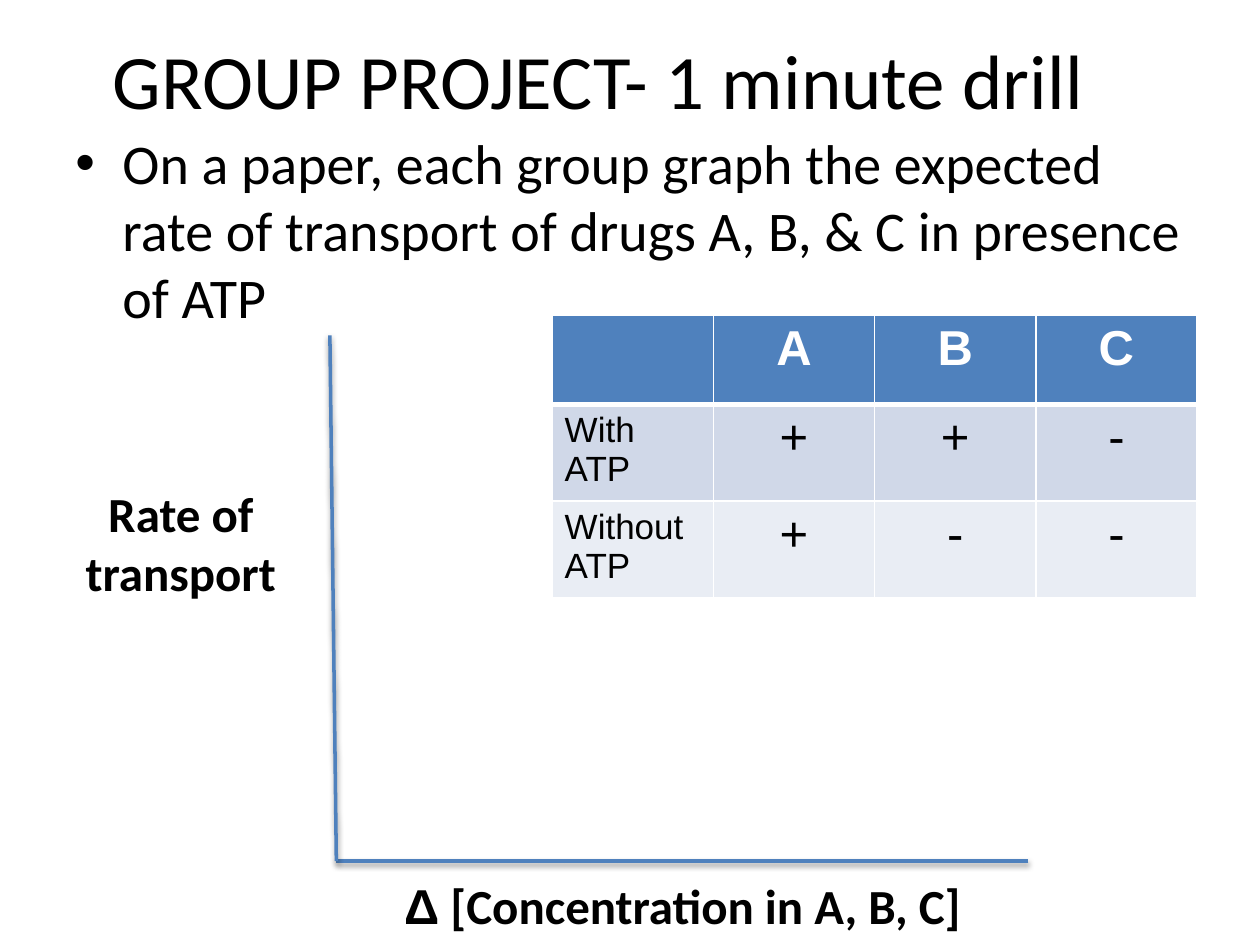
from dataclasses import dataclass

from lxml.etree import SubElement
from pptx import Presentation
from pptx.dml.color import RGBColor
from pptx.enum.shapes import MSO_CONNECTOR
from pptx.enum.text import MSO_ANCHOR, PP_ALIGN
from pptx.oxml.ns import qn
from pptx.util import Cm, Pt


@dataclass(frozen=True)
class Theme:
    ink: str = "000000"
    white: str = "FFFFFF"
    accent: str = "4F81BD"
    bands: tuple = ("D0D8E8", "E9EDF4")
    body_font: str = "Calibri"
    table_font: str = "Arial"
    title: int = 44
    body: int = 32
    label: int = 28
    row_head: int = 20


def rgb(value):
    return RGBColor.from_string(value)


class Deck:
    def __init__(self, theme, width, height):
        self.theme = theme
        self.prs = Presentation()
        self.prs.slide_width, self.prs.slide_height = Cm(width), Cm(height)
        self.s = self.prs.slides.add_slide(self.prs.slide_layouts[6])

    def run(self, p, text, size, font=None, color=None, bold=False):
        r = p.add_run()
        r.text = text
        r.font.size, r.font.bold = Pt(size), bold
        r.font.name = font or self.theme.body_font
        r.font.color.rgb = rgb(color or self.theme.ink)

    def text(self, box, runs, size, bold=False, align=PP_ALIGN.LEFT,
             anchor=MSO_ANCHOR.TOP, wrap=True):
        """Place one paragraph made of (text, font) runs."""
        tf = self.s.shapes.add_textbox(*map(Cm, box)).text_frame
        tf.word_wrap, tf.vertical_anchor = wrap, anchor
        p = tf.paragraphs[0]
        p.alignment = align
        for text, font in runs:
            self.run(p, text, size, font, bold=bold)
        return p

    def bullet(self, box, text, indent=0.95):
        p = self.text(box, [(text, None)], self.theme.body)
        p.space_before = Pt(0.2 * self.theme.body)
        pPr = p._p.get_or_add_pPr()
        pPr.set("marL", str(Cm(indent)))
        pPr.set("indent", str(-Cm(indent)))
        SubElement(pPr, qn("a:buFont"), typeface="Arial")
        SubElement(pPr, qn("a:buChar"), char="•")

    def axis(self, start, end):
        sp = self.s.shapes.add_connector(
            MSO_CONNECTOR.STRAIGHT, *map(Cm, start + end))
        sp.line.color.rgb = rgb(self.theme.accent)
        sp.line.width = Pt(2)
        # Soft shadow straight below the line
        effects = SubElement(sp._element.spPr, qn("a:effectLst"))
        shadow = SubElement(effects, qn("a:outerShdw"), blurRad=str(Pt(3.1)),
                            dist=str(Pt(1.6)), dir="5400000", rotWithShape="0")
        color = SubElement(shadow, qn("a:srgbClr"), val=self.theme.ink)
        SubElement(color, qn("a:alpha"), val="38000")

    def cell(self, cell, fill, top, bottom):
        tcPr = cell._tc.get_or_add_tcPr()
        for side, width in zip("LRTB", (1, 1, top, bottom)):
            ln = SubElement(tcPr, qn(f"a:ln{side}"), w=str(Pt(width)))
            solid = SubElement(ln, qn("a:solidFill"))
            SubElement(solid, qn("a:srgbClr"), val=self.theme.white)
        cell.fill.solid()
        cell.fill.fore_color.rgb = rgb(fill)

    def table(self, left, top, col_width, row_heights, rows):
        t = self.theme
        n_cols = len(rows[0])
        table = self.s.shapes.add_table(
            len(rows), n_cols, Cm(left), Cm(top),
            Cm(col_width * n_cols), Cm(sum(row_heights))).table
        for col in table.columns:
            col.width = Cm(col_width)
        for i, values in enumerate(rows):
            table.rows[i].height = Cm(row_heights[i])
            header = i == 0
            fill = t.accent if header else t.bands[(i - 1) % 2]
            for j, value in enumerate(values):
                cell = table.cell(i, j)
                self.cell(cell, fill, 3 if i == 1 else 1, 3 if header else 1)
                if not value:
                    continue
                p = cell.text_frame.paragraphs[0]
                p.alignment = PP_ALIGN.CENTER if j else PP_ALIGN.LEFT
                self.run(p, value, t.label if j else t.row_head, t.table_font,
                         t.white if header else t.ink, header)


def main():
    theme = Theme()
    deck = Deck(theme, 25.4, 19.05)

    # Title and task
    deck.text((0, 0, 24.13, 3.18), [("GROUP PROJECT- 1 minute drill", None)],
              theme.title, align=PP_ALIGN.CENTER, anchor=MSO_ANCHOR.MIDDLE)
    deck.bullet((1.27, 2.46, 22.86, 12.29),
                "On a paper, each group graph the expected rate of transport "
                "of drugs A, B, & C in presence of ATP")

    # Empty graph: axes and their labels
    origin = (6.78, 17.36)
    deck.axis((20.73, 17.36), origin)
    deck.axis((6.65, 6.76), origin)
    deck.text((1.27, 9.63, 4.75, 2.64), [("Rate of transport", None)],
              theme.label, bold=True, align=PP_ALIGN.CENTER)
    deck.text((7.9, 17.53, 11.79, 1.45),
              [("Δ", "Arial"), (" [Concentration in A, B, C]", None)],
              theme.label, bold=True, wrap=False)

    # Transport of each drug
    deck.table(11.13, 6.35, 3.25, (1.8, 1.95, 1.95), [
        ("", "A", "B", "C"),
        ("With ATP", "+", "+", "-"),
        ("Without ATP", "+", "-", "-"),
    ])

    deck.prs.save("out.pptx")


if __name__ == "__main__":
    main()
